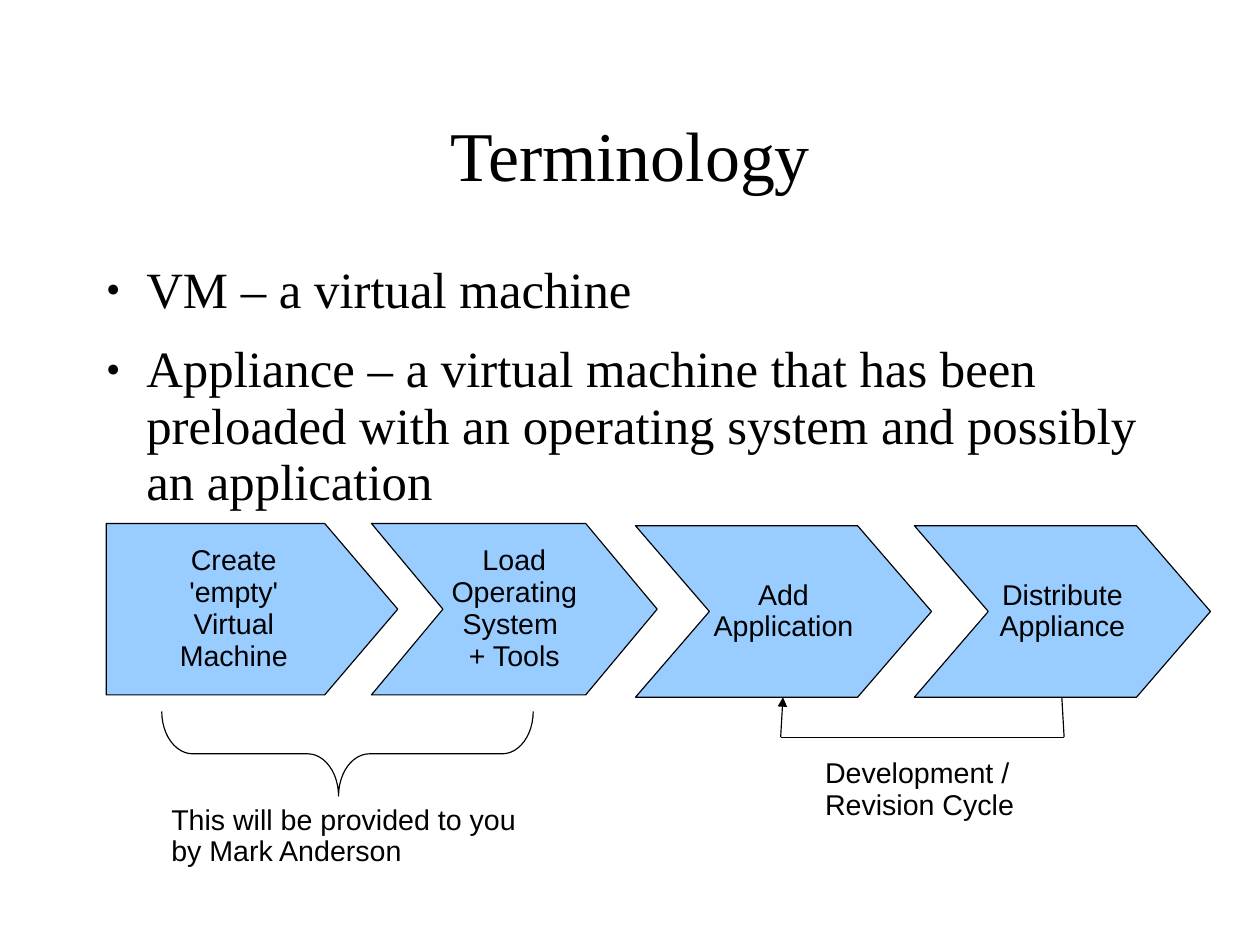
import itertools

import pptx
import pptx.dml.color
import pptx.enum.shapes
import pptx.enum.text
import pptx.oxml
import pptx.oxml.ns
import pptx.util

SHAPE = pptx.enum.shapes.MSO_SHAPE
ALIGN = pptx.enum.text.PP_ALIGN
ANCHOR = pptx.enum.text.MSO_ANCHOR

SLIDE_WIDTH, SLIDE_HEIGHT = pptx.util.Cm(28), pptx.util.Cm(21)
# Places are columns and rows of a grid with cells of a tenth of an inch.
CELL = pptx.util.Inches(0.1)
BLACK, STEP_BLUE = "000000", "99CCFF"
SERIF, SANS = "Times New Roman", "Arial"

TITLE = ["Terminology"]
DEFINITIONS = [
    "VM – a virtual machine",
    "Appliance – a virtual machine that has been "
    "preloaded with an operating system and possibly an application",
]
TITLE_AREA = (8.1, 6.9, 94.1, 13.8)
DEFINITIONS_AREA = (8.1, 23, 94.1, 51.1)

STEP_HEIGHT = 15
STEPS = [  # lines, outline, point depth, left, top, width
    (["Create", "'empty'", "Virtual", "Machine"], SHAPE.PENTAGON, 0.426, 9.3, 45.8, 25.5),
    (["Load", "Operating", "System ", "+ Tools"], SHAPE.CHEVRON, 0.417, 32.5, 45.8, 25),
    (["Add", "Application"], SHAPE.CHEVRON, 0.431, 55.6, 46, 25.9),
    (["Distribute", "Appliance"], SHAPE.CHEVRON, 0.431, 80, 46, 25.9),
]
NOTES = [
    (["Development /", "Revision Cycle"], (71.2, 65.8, 18.8, 6.6)),
    (["This will be provided to you", "by Mark Anderson"], (14, 69.9, 32.5, 6.6)),
]
REVISION_PATH = [(92.9, 61), (93.1, 64.5), (68.3, 64.5), (68.5, 61)]
BRACE_AREA = (26.7, 49.7, 7.4, 32.5)
BRACE_BENDS = (0.366, 0.476)

STEP_FORMAT = {"alignment": ALIGN.CENTER, "line_spacing": 0.93}
NOTE_FORMAT = {"alignment": ALIGN.LEFT, "line_spacing": 0.93}
DEFINITION_FORMAT = {**NOTE_FORMAT, "space_after": pptx.util.Pt(14.2)}
NO_MARGINS = dict.fromkeys(("margin_left", "margin_top", "margin_right", "margin_bottom"), 0)


def color(value):
    return pptx.dml.color.RGBColor.from_string(value)


def cells(*lengths):
    return [round(length * CELL) for length in lengths]


def drawing_xml(tag, attributes="", content=""):
    namespace = pptx.oxml.ns.nsdecls("a")
    return pptx.oxml.parse_xml(f"<a:{tag} {namespace} {attributes}>{content}</a:{tag}>")


def apply(target, values):
    for name, value in values.items():
        setattr(target, name, value)


def write(frame, lines, font, size, paragraph_format, frame_format):
    apply(frame, frame_format)
    for number, line in enumerate(lines):
        paragraph = frame.add_paragraph() if number else frame.paragraphs[0]
        apply(paragraph, paragraph_format)
        run = paragraph.add_run()
        run.text = line
        apply(run.font, {"name": font, "size": pptx.util.Pt(size)})
        run.font.color.rgb = color(BLACK)


def add_bullet(paragraph):
    properties = paragraph._p.get_or_add_pPr()
    properties.set("marL", str(pptx.util.Inches(0.47)))
    properties.set("indent", str(pptx.util.Inches(-0.35)))
    properties.append(drawing_xml("buClr", content=f'<a:srgbClr val="{BLACK}"/>'))
    properties.append(drawing_xml("buSzPct", 'val="45000"'))
    properties.append(drawing_xml("buFont", f'typeface="{SANS}"'))
    properties.append(drawing_xml("buChar", 'char="●"'))


def outline(part):
    part.line.color.rgb = color(BLACK)
    part.line.width = pptx.util.Pt(0.75)


def add_outlined(slide, kind, area, bends):
    part = slide.shapes.add_shape(kind, *cells(*area))
    part.shadow.inherit = False
    for number, bend in enumerate(bends):
        part.adjustments[number] = bend
    outline(part)
    return part


def add_step(slide, lines, kind, depth, left, top, width):
    step = add_outlined(slide, kind, (left, top, width, STEP_HEIGHT), [depth])
    step.fill.solid()
    step.fill.fore_color.rgb = color(STEP_BLUE)
    write(step.text_frame, lines, SANS, 18, STEP_FORMAT,
          {"word_wrap": False, "vertical_anchor": ANCHOR.MIDDLE})


def add_revision_cycle(slide):
    """Draw the path from the last step back to the one before, with an arrowhead."""
    for start, end in itertools.pairwise(REVISION_PATH):
        link = slide.shapes.add_connector(
            pptx.enum.shapes.MSO_CONNECTOR.STRAIGHT, *cells(*start, *end))
        outline(link)
        link._element.spPr.append(drawing_xml("effectLst"))
    link.line._get_or_add_ln().append(drawing_xml("tailEnd", 'type="triangle"'))


def main():
    deck = pptx.Presentation()
    deck.slide_width = SLIDE_WIDTH
    deck.slide_height = SLIDE_HEIGHT
    slide = deck.slides.add_slide(deck.slide_layouts[6])

    title = slide.shapes.add_textbox(*cells(*TITLE_AREA))
    write(title.text_frame, TITLE, SERIF, 44, STEP_FORMAT,
          {**NO_MARGINS, "word_wrap": True, "vertical_anchor": ANCHOR.MIDDLE})

    definitions = slide.shapes.add_textbox(*cells(*DEFINITIONS_AREA))
    write(definitions.text_frame, DEFINITIONS, SERIF, 32, DEFINITION_FORMAT,
          {**NO_MARGINS, "word_wrap": True})
    for definition in definitions.text_frame.paragraphs:
        add_bullet(definition)

    for step in STEPS:
        add_step(slide, *step)
    add_revision_cycle(slide)

    brace = add_outlined(slide, SHAPE.LEFT_BRACE, BRACE_AREA, BRACE_BENDS)
    brace.fill.background()
    brace.rotation = 270

    for lines, area in NOTES:
        note = slide.shapes.add_textbox(*cells(*area))
        write(note.text_frame, lines, SANS, 18, NOTE_FORMAT, {"word_wrap": False})

    deck.save("out.pptx")


if __name__ == "__main__":
    main()
